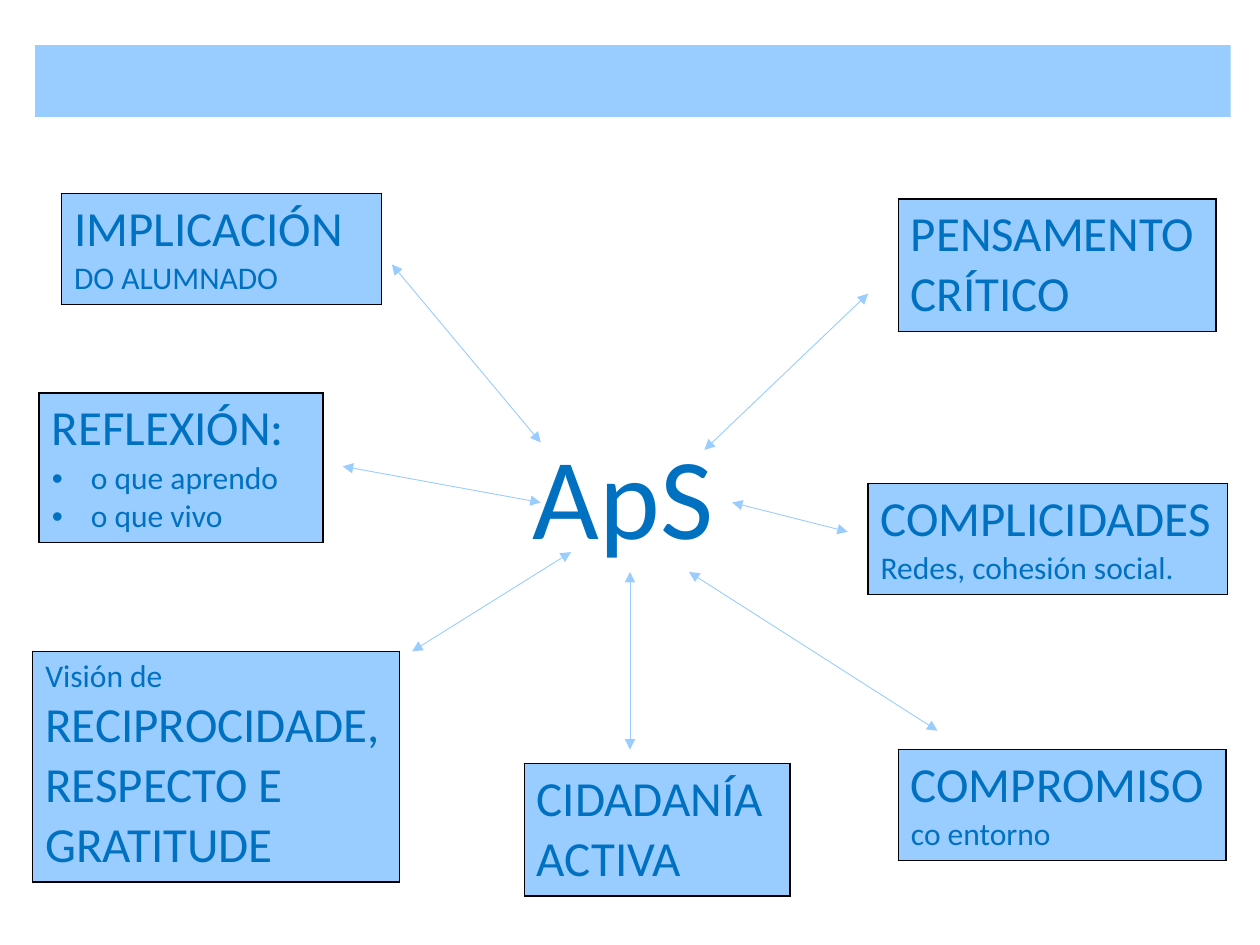
from lxml.etree import SubElement
from pptx import Presentation
from pptx.dml.color import RGBColor
from pptx.enum.shapes import MSO_CONNECTOR, MSO_SHAPE
from pptx.oxml.ns import qn
from pptx.util import Cm, Pt

SKY = RGBColor(0x99, 0xCC, 0xFF)
BLUE = RGBColor(0x00, 0x70, 0xC0)
BLACK = RGBColor(0x00, 0x00, 0x00)
FONT = "Calibri"
LARGE, SMALL, CENTRE = 28, 18, 66

BOXES = [
    ((1.24, 3.9, 6.45, 2.2), [[("IMPLICACIÓN", LARGE), (" DO ALUMNADO", SMALL)]]),
    ((0.79, 7.92, 5.72, 2.97), [
        [("REFLEXIÓN:", LARGE)],
        [("o que aprendo", SMALL)],
        [("o que vivo", SMALL)],
    ]),
    ((18.11, 4.01, 6.4, 2.62), [[("PENSAMENTO CRÍTICO", LARGE)]]),
    ((0.66, 13.13, 7.39, 4.57), [
        [("Visión de ", SMALL), ("RECIPROCIDADE, RESPECTO E GRATITUDE", LARGE)],
    ]),
    ((18.11, 15.11, 6.6, 2.2), [[("COMPROMISO ", LARGE), ("co entorno", SMALL)]]),
    ((17.5, 9.75, 7.24, 2.2), [
        [("COMPLICIDADES", LARGE)],
        [("Redes, cohesión social.", SMALL)],
    ]),
    ((10.57, 15.39, 5.36, 2.62), [[("CIDADANÍA ACTIVA", LARGE)]]),
]
BULLETED = ("o que aprendo", "o que vivo")

ARROWS = [
    (7.9, 5.33, 10.9, 8.92),
    (14.2, 9.07, 17.5, 5.92),
    (10.9, 10.13, 6.91, 9.4),
    (11.51, 11.13, 8.31, 13.13),
    (12.7, 11.53, 12.7, 15.11),
    (14.76, 10.13, 17.09, 10.72),
    (13.89, 11.53, 18.9, 14.73),
]


def add_bar(slide):
    bar = slide.shapes.add_shape(MSO_SHAPE.RECTANGLE, Cm(0.71), Cm(0.91), Cm(24.1), Cm(1.45))
    bar.shadow.inherit = False
    bar.fill.solid()
    bar.fill.fore_color.rgb = SKY
    bar.line.fill.background()


def add_borders(cell):
    properties = cell._tc.get_or_add_tcPr()
    for position, side in enumerate(("lnL", "lnR", "lnT", "lnB")):
        border = SubElement(properties, qn(f"a:{side}"), w=str(Pt(1)))
        fill = SubElement(border, qn("a:solidFill"))
        SubElement(fill, qn("a:srgbClr"), val=str(BLACK))
        properties.insert(position, border)


def add_bullet(paragraph):
    properties = paragraph._p.get_or_add_pPr()
    properties.set("marL", str(Cm(0.79)))
    properties.set("indent", str(-Cm(0.79)))
    properties.insert(0, properties.makeelement(qn("a:buFont"), {"typeface": "Arial"}))
    properties.insert(1, properties.makeelement(qn("a:buChar"), {"char": "•"}))


def write_paragraph(paragraph, runs):
    paragraph.font.name = FONT
    paragraph.font.color.rgb = BLUE
    for text, size in runs:
        run = paragraph.add_run()
        run.text = text
        run.font.name = FONT
        run.font.size = Pt(size)
        run.font.color.rgb = BLUE
    if runs[0][0] in BULLETED:
        add_bullet(paragraph)


def add_box(slide, place, paragraphs, framed=True):
    table = slide.shapes.add_table(1, 1, *map(Cm, place)).table
    table.first_row = False
    table.horz_banding = False
    cell = table.cell(0, 0)
    if framed:
        cell.fill.solid()
        cell.fill.fore_color.rgb = SKY
        add_borders(cell)
    else:
        cell.fill.background()
    frame = cell.text_frame
    for index, runs in enumerate(paragraphs):
        paragraph = frame.add_paragraph() if index else frame.paragraphs[0]
        write_paragraph(paragraph, runs)


def add_arrow(slide, ends):
    arrow = slide.shapes.add_connector(MSO_CONNECTOR.STRAIGHT, *map(Cm, ends))
    arrow.line.color.rgb = SKY
    arrow.line.width = Pt(0.5)
    line = arrow.line._get_or_add_ln()
    for end in ("headEnd", "tailEnd"):
        SubElement(line, qn(f"a:{end}"), type="triangle")
    SubElement(arrow._element.spPr, qn("a:effectLst"))


def main():
    presentation = Presentation()
    presentation.slide_width = Cm(25.4)
    presentation.slide_height = Cm(19.05)
    slide = presentation.slides.add_slide(presentation.slide_layouts[6])
    add_bar(slide)
    for place, paragraphs in BOXES:
        add_box(slide, place, paragraphs)
    add_box(slide, (10.49, 8.53, 5, 3.05), [[("ApS", CENTRE)]], framed=False)
    for ends in ARROWS:
        add_arrow(slide, ends)
    presentation.save("out.pptx")


if __name__ == "__main__":
    main()
